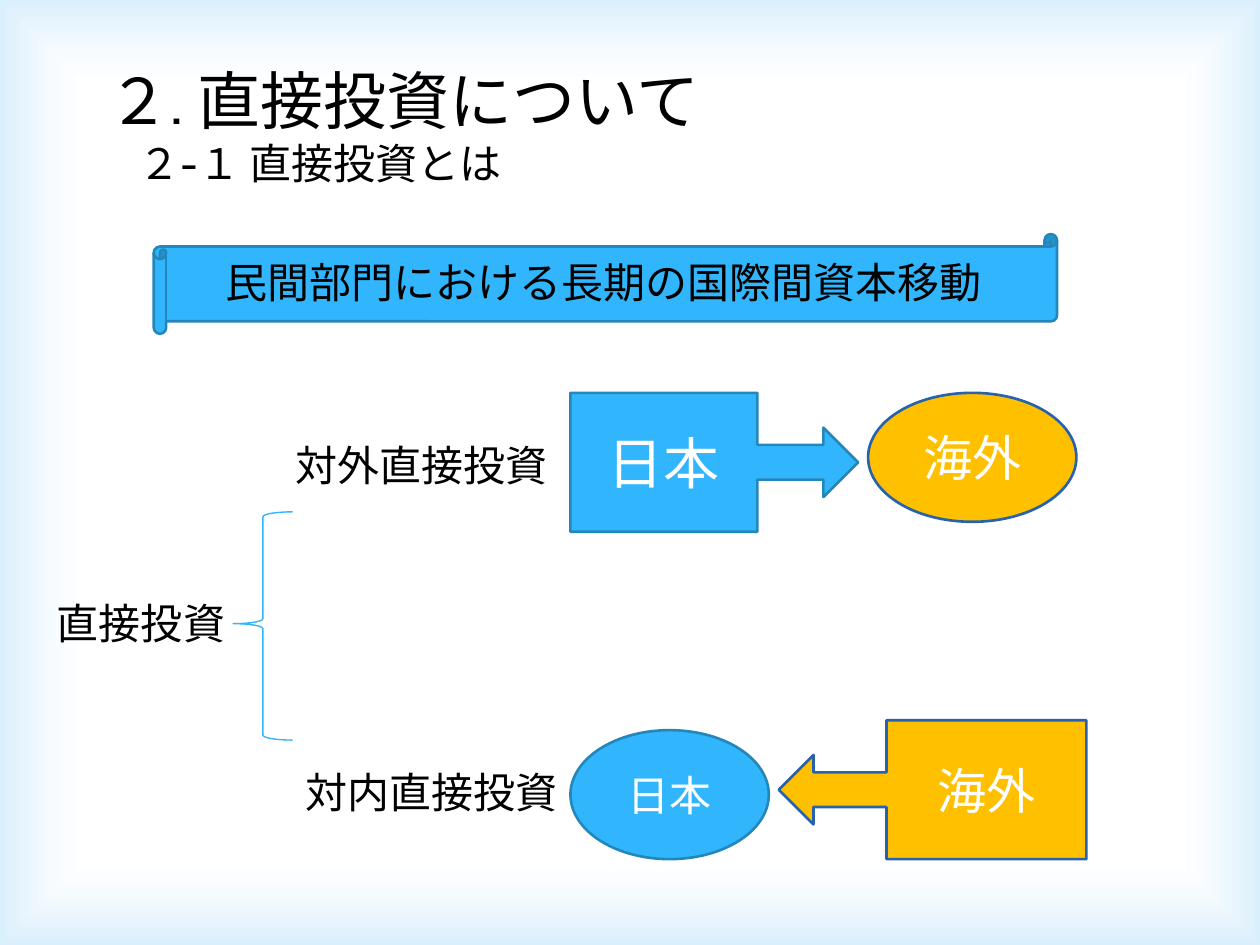
from lxml import etree
from pptx import Presentation
from pptx.dml.color import RGBColor
from pptx.enum.lang import MSO_LANGUAGE_ID
from pptx.enum.shapes import MSO_SHAPE
from pptx.enum.text import MSO_ANCHOR, MSO_AUTO_SIZE, PP_ALIGN
from pptx.oxml import parse_xml
from pptx.oxml.ns import nsdecls, qn
from pptx.util import Cm, Pt

FONT = "Cabin"
SLIDE_WIDTH, SLIDE_HEIGHT = Cm(25.4), Cm(19.05)
BLACK = RGBColor(0x00, 0x00, 0x00)
WHITE = RGBColor(0xFF, 0xFF, 0xFF)
SKY = RGBColor(0x31, 0xB6, 0xFD)
SKY_EDGE = RGBColor(0x24, 0x87, 0xBB)
GOLD = RGBColor(0xFF, 0xC0, 0x00)
GOLD_EDGE = RGBColor(0x28, 0x62, 0xAA)
GLOW = RGBColor(0x5B, 0xBA, 0xF6)

JAPAN = (SKY, SKY_EDGE)
OVERSEAS = (GOLD, GOLD_EDGE)


def add_run(paragraph, text, size, color):
    run = paragraph.add_run()
    run.text = text
    run.font.name = FONT
    run.font.size = Pt(size)
    run.font.color.rgb = color
    run.font.language_id = MSO_LANGUAGE_ID.JAPANESE


def add_figure(shapes, preset, box, colors, text="", size=24):
    """Add a filled, outlined preset shape with an optional centred label."""
    fill, edge = colors
    figure = shapes.add_shape(preset, *map(Cm, box))
    figure.shadow.inherit = False
    figure.fill.solid()
    figure.fill.fore_color.rgb = fill
    figure.line.color.rgb = edge
    figure.line.width = Pt(1.5)
    if text:
        figure.text_frame.vertical_anchor = MSO_ANCHOR.MIDDLE
        paragraph = figure.text_frame.paragraphs[0]
        paragraph.alignment = PP_ALIGN.CENTER
        add_run(paragraph, text, size, WHITE)


def add_label(shapes, box, *lines):
    """Add a text box; each line is (text, size, left indent in points)."""
    frame = shapes.add_textbox(*map(Cm, box)).text_frame
    frame.word_wrap = True
    frame.auto_size = MSO_AUTO_SIZE.SHAPE_TO_FIT_TEXT
    for number, (text, size, indent) in enumerate(lines):
        paragraph = frame.add_paragraph() if number else frame.paragraphs[0]
        if indent:
            paragraph._p.get_or_add_pPr().set("marL", str(Pt(indent)))
        add_run(paragraph, text, size, BLACK)


def add_glowing_frame(shapes):
    """Cover the slide with a gradient that turns blue towards the edges."""
    frame = shapes.add_shape(MSO_SHAPE.RECTANGLE, 0, 0, SLIDE_WIDTH, SLIDE_HEIGHT)
    frame.shadow.inherit = False
    frame.line.fill.background()
    gradient = parse_xml(f'<a:gradFill {nsdecls("a")} rotWithShape="1"/>')
    stops = etree.SubElement(gradient, qn("a:gsLst"))
    for position, color, opacity in ((83, WHITE, 11), (100, GLOW, 23)):
        stop = etree.SubElement(stops, qn("a:gs"), pos=str(position * 1000))
        tint = etree.SubElement(stop, qn("a:srgbClr"), val=str(color))
        etree.SubElement(tint, qn("a:alpha"), val=str(opacity * 1000))
    path = etree.SubElement(gradient, qn("a:path"), path="rect")
    etree.SubElement(path, qn("a:fillToRect"),
                     dict.fromkeys("ltrb", "50000"))
    frame._element.spPr.find(qn("a:prstGeom")).addnext(gradient)


def add_brace(shapes, box):
    brace = shapes.add_shape(MSO_SHAPE.LEFT_BRACE, *map(Cm, box))
    brace.shadow.inherit = False
    brace.adjustments[0] = 0.083
    brace.adjustments[1] = 0.49
    brace.fill.background()
    brace.line.color.rgb = SKY
    brace.line.width = Pt(0.79)


def main():
    presentation = Presentation()
    presentation.slide_width = SLIDE_WIDTH
    presentation.slide_height = SLIDE_HEIGHT
    slide = presentation.slides.add_slide(presentation.slide_layouts[6])
    slide.background.fill.solid()
    slide.background.fill.fore_color.rgb = WHITE
    shapes = slide.shapes

    add_glowing_frame(shapes)
    add_figure(shapes, MSO_SHAPE.HORIZONTAL_SCROLL, (3.1, 4.72, 18.21, 2.01), JAPAN)

    outward = shapes.add_group_shape().shapes
    add_figure(outward, MSO_SHAPE.OVAL, (17.5, 7.92, 4.2, 2.6), OVERSEAS, "海外", 28)
    add_figure(outward, MSO_SHAPE.RIGHT_ARROW_CALLOUT, (11.5, 7.92, 5.8, 2.8),
               JAPAN, "日本", 32)

    inward = shapes.add_group_shape().shapes
    add_figure(inward, MSO_SHAPE.OVAL, (11.5, 14.72, 4, 2.6), JAPAN, "日本", 24)
    add_figure(inward, MSO_SHAPE.LEFT_ARROW_CALLOUT, (15.7, 14.52, 6.2, 2.8),
               OVERSEAS, "海外", 28)

    add_label(shapes, (4.3, 5.05, 16.8, 1.28),
              ("民間部門における長期の国際間資本移動", 24, 0))
    add_label(shapes, (5.7, 8.73, 6, 1.28), ("対外直接投資", 24, 0))
    add_label(shapes, (5.9, 15.32, 5.7, 1.28), ("対内直接投資", 24, 0))

    division = shapes.add_group_shape().shapes
    add_brace(division, (4.7, 10.32, 1.2, 4.6))
    add_label(division, (0.9, 11.92, 4, 1.28), ("直接投資", 24, 0))

    add_label(shapes, (1.91, 1.12, 16.2, 2.82),
              ("２. 直接投資について", 36, 0),
              ("２-１ 直接投資とは", 24, 18))

    presentation.save("out.pptx")


if __name__ == "__main__":
    main()
